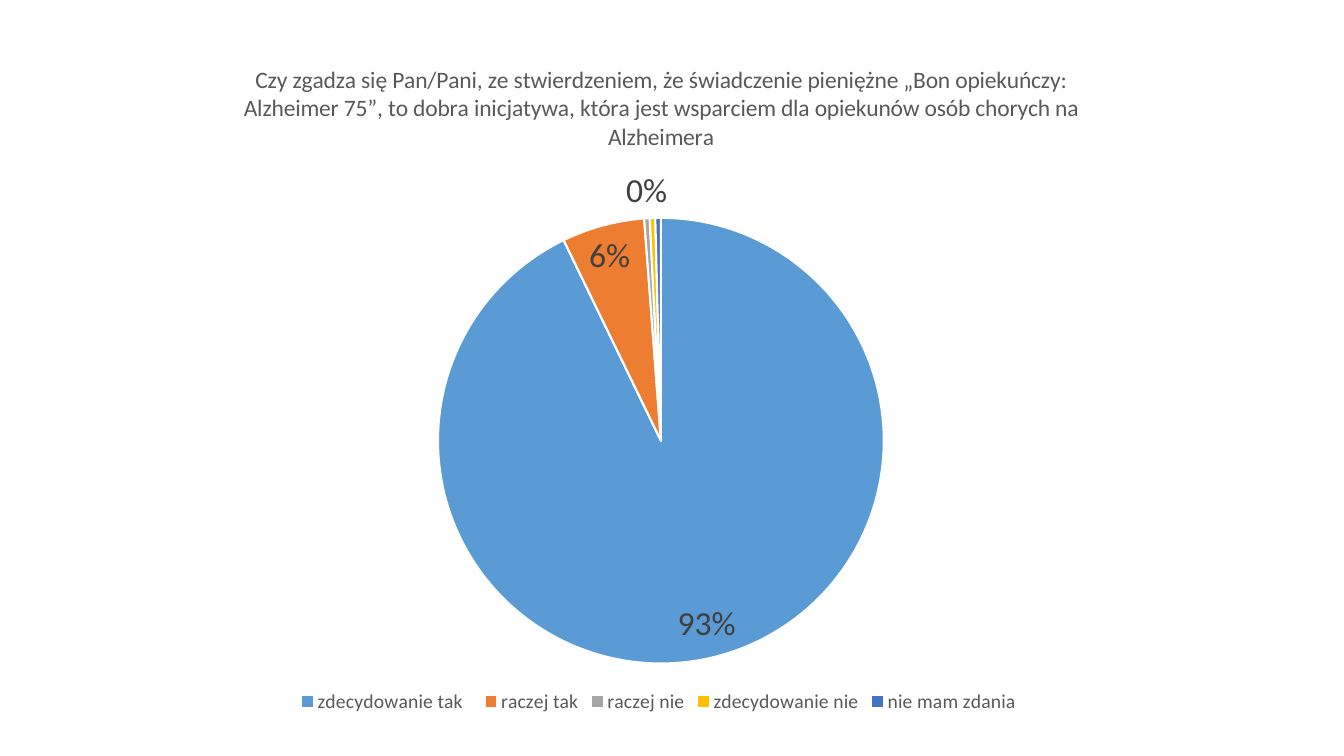
import pptx
import pptx.chart.data
import pptx.dml.color
import pptx.enum.chart
import pptx.oxml
import pptx.oxml.ns
import pptx.util
from pptx.util import Inches

QUESTION = [
    "Czy zgadza się Pan/Pani, ze stwierdzeniem, że świadczenie pieniężne „Bon opiekuńczy:",
    "Alzheimer 75”, to dobra inicjatywa, która jest wsparciem dla opiekunów osób chorych na",
    "Alzheimera",
]
# answer, share in percent, slice colour
ANSWERS = [
    ("zdecydowanie tak  ", 93, "blue"),
    ("raczej tak", 6, "orange"),
    ("raczej nie", 0.4, "grey"),
    ("zdecydowanie nie", 0.4, "yellow"),
    ("nie mam zdania ", 0.4, "navy"),
]
UNLABELLED = [3, 4]
COLORS = {
    "blue": "5B9BD5",
    "orange": "ED7D31",
    "grey": "A5A5A5",
    "yellow": "FFC000",
    "navy": "4472C4",
    "border": "FFFFFF",
    "text": "595959",
    "label": "404040",
}
PIE_AREA = {"x": 0.31, "y": 0.26, "w": 0.38, "h": 0.66}


def color(name):
    return pptx.dml.color.RGBColor.from_string(COLORS[name])


def style(font, size, color_name):
    font.name = "Calibri"
    font.size = pptx.util.Pt(size)
    font.bold = False
    font.color.rgb = color(color_name)


def place_pie(chart):
    """Fix the inner plot area as fractions of the chart frame."""
    plot_area = chart.element.find(".//" + pptx.oxml.ns.qn("c:plotArea"))
    for automatic in plot_area.findall(pptx.oxml.ns.qn("c:layout")):
        plot_area.remove(automatic)
    sizes = "".join(f'<c:{side} val="{share}"/>' for side, share in PIE_AREA.items())
    plot_area.insert(0, pptx.oxml.parse_xml(
        f'<c:layout {pptx.oxml.ns.nsdecls("c")}><c:manualLayout>'
        '<c:layoutTarget val="inner"/><c:xMode val="edge"/><c:yMode val="edge"/>'
        f'{sizes}</c:manualLayout></c:layout>'))


def hide_labels(labels, indexes):
    for position, index in enumerate(indexes):
        labels._element.insert(position, pptx.oxml.parse_xml(
            f'<c:dLbl {pptx.oxml.ns.nsdecls("c")}><c:idx val="{index}"/>'
            '<c:delete val="1"/></c:dLbl>'))


def add_pie(slide):
    data = pptx.chart.data.CategoryChartData()
    data.categories = [answer for answer, _, _ in ANSWERS]
    data.add_series("Series 1", [share for _, share, _ in ANSWERS])
    chart = slide.shapes.add_chart(
        pptx.enum.chart.XL_CHART_TYPE.PIE,
        Inches(0.62), Inches(0.42), Inches(11.87), Inches(6.7), data).chart
    style(chart.font, 14, "text")

    chart.has_title = True
    title = chart.chart_title.text_frame
    title.text = "\n".join(QUESTION)
    for line in title.paragraphs:
        style(line.font, 16.8, "text")
    chart.chart_title.include_in_layout = False

    chart.has_legend = True
    chart.legend.position = pptx.enum.chart.XL_LEGEND_POSITION.BOTTOM
    chart.legend.include_in_layout = False
    style(chart.legend.font, 14, "text")

    pie = chart.plots[0]
    pie.vary_by_categories = True
    series = pie.series[0]
    for index, (_, _, color_name) in enumerate(ANSWERS):
        look = series.points[index].format
        look.fill.solid()
        look.fill.fore_color.rgb = color(color_name)
        look.line.color.rgb = color("border")
        look.line.width = pptx.util.Pt(1.5)

    labels = series.data_labels
    labels.show_percentage = True
    labels.show_value = False
    labels.number_format = "0%"
    labels.number_format_is_linked = False
    labels.position = pptx.enum.chart.XL_LABEL_POSITION.BEST_FIT
    style(labels.font, 24, "label")
    hide_labels(labels, UNLABELLED)
    place_pie(chart)


def main():
    deck = pptx.Presentation()
    deck.slide_width = Inches(13.33)
    deck.slide_height = Inches(7.5)
    add_pie(deck.slides.add_slide(deck.slide_layouts[6]))
    deck.save("out.pptx")


if __name__ == "__main__":
    main()
